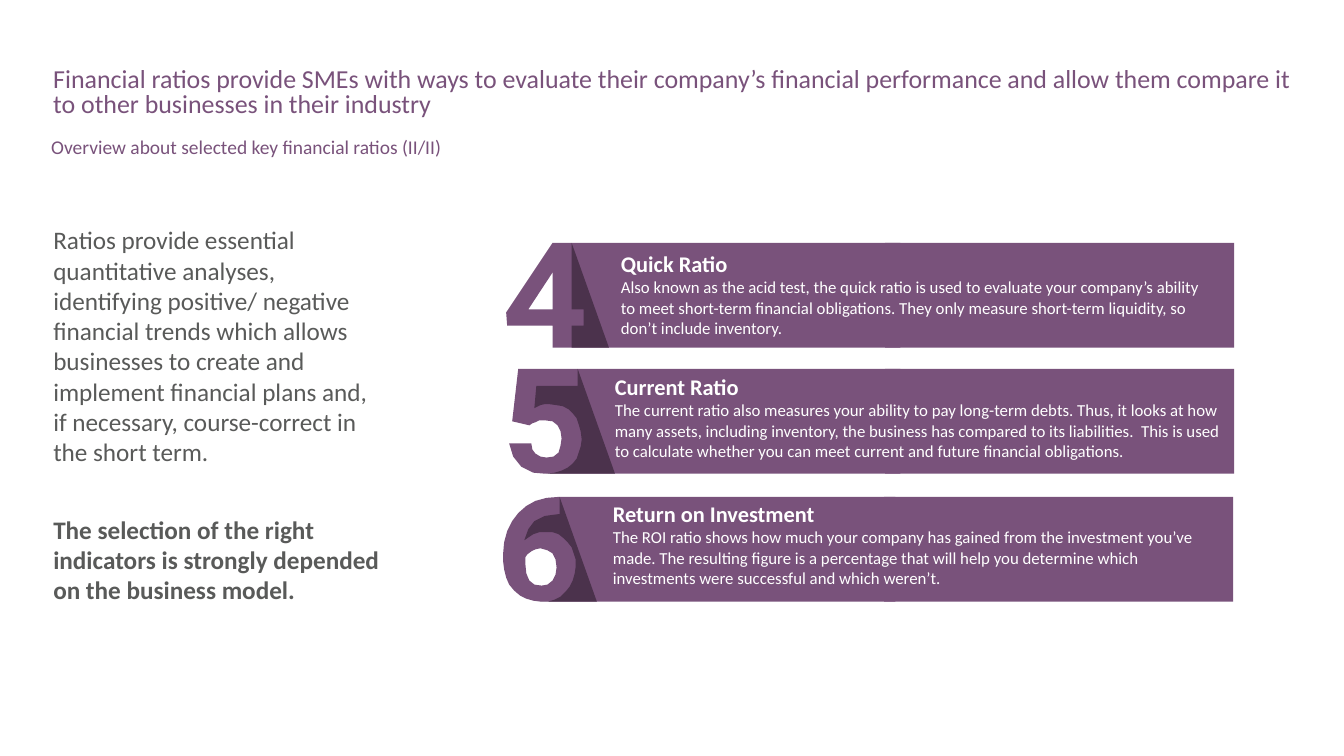
from pptx import Presentation, util as u
from pptx.dml.color import RGBColor
from pptx.enum import shapes, text

# The slide is a grid of 1333 columns by 750 rows.
CELL = u.Inches(0.01)
PURPLE, SHADE, GREY, WHITE = "79527B", "4B324C", "595A59", "FFFFFF"
BAND_HEIGHT = 104

deck = Presentation()
deck.slide_width, deck.slide_height = 1333 * CELL, 750 * CELL
slide = deck.slides.add_slide(deck.slide_layouts[6])


def paint(shape, color):
    shape.shadow.inherit = False
    shape.fill.solid()
    shape.fill.fore_color.rgb = RGBColor.from_string(color)
    shape.line.fill.background()


def write(column, row, columns, rows, paragraphs, size, color, bold=False):
    """Add a wrapped text box and return its text frame."""
    frame = slide.shapes.add_textbox(
        column * CELL, row * CELL, columns * CELL, rows * CELL).text_frame
    frame.word_wrap = True
    frame.text = "\n".join(paragraphs)
    for paragraph in frame.paragraphs:
        font = paragraph.runs[0].font
        font.name, font.size, font.bold = "Calibri", u.Pt(size), bold
        font.color.rgb = RGBColor.from_string(color)
    return frame


summary = write(43, 179, 349, 504, [
    "Ratios provide essential quantitative analyses, identifying positive/ negative "
    "financial trends which allows businesses to create and implement financial plans "
    "and, if necessary, course-correct in the short term.",
    "The selection of the right indicators is strongly depended on the business model.",
], 18, GREY)
summary.vertical_anchor = text.MSO_ANCHOR.MIDDLE
summary.margin_bottom = 44 * CELL
conclusion = summary.paragraphs[1]
conclusion.space_before = u.Pt(34)
conclusion.runs[0].font.bold = True

title = write(43, 63, 1254, 64, [
    "Financial ratios provide SMEs with ways to evaluate their company’s financial "
    "performance and allow them compare it to other businesses in their industry",
], 18.5, PURPLE)
title.paragraphs[0].line_spacing = 0.8
subtitle = write(41, 135, 1256, 28, [
    "Overview about selected key financial ratios (II/II)"], 13.9, PURPLE)
subtitle.paragraphs[0].line_spacing = 0.7

# Outlines are measured in cells from column 500 and the top row of the band.
four = [
    [(48, 0), (2, 69), (3, 82), (48, 82), (48, 104), (393, 104), (393, 0)],
    [(48, 66), (24, 66), (47, 31), (48, 29)],
]
four_shade = [[(67, 0), (67, 66), (79, 66), (79, 82), (67, 82), (67, 104), (104, 104)]]
five = [[
    (14, 0), (8, 52), (25, 56), (28, 54), (31, 53), (35, 51), (40, 51), (48, 52),
    (53, 56), (56, 62), (57, 69), (56, 76), (54, 83), (49, 87), (42, 88), (36, 87),
    (31, 84), (28, 80), (27, 74), (5, 74), (9, 87), (17, 97), (29, 103), (41, 104),
    (393, 104), (393, 0),
]]
five_shade = [[
    (73, 0), (73, 17), (32, 17), (30, 39), (32, 38), (36, 36), (40, 35), (45, 35),
    (52, 36), (58, 37), (64, 40), (68, 44), (72, 49), (74, 55), (76, 62), (77, 70),
    (76, 77), (74, 83), (72, 89), (68, 94), (63, 98), (57, 101), (50, 103), (42, 104),
    (110, 104),
]]
six = [
    [(54, 0), (42, 1), (31, 4), (22, 9), (14, 16), (8, 24), (3, 34), (0, 45), (-1, 56),
     (-1, 64), (0, 72), (2, 80), (5, 87), (10, 93), (16, 98), (22, 101), (29, 103),
     (37, 104), (388, 104), (388, 0)],
    [(51, 77), (48, 83), (43, 87), (37, 88), (30, 87), (25, 83), (22, 76), (21, 66),
     (21, 60), (23, 57), (27, 54), (31, 52), (36, 51), (43, 53), (48, 56), (51, 62),
     (52, 70)],
]
six_shade = [[
    (55, 0), (55, 17), (47, 18), (40, 19), (30, 24), (24, 32), (20, 43), (29, 37),
    (35, 35), (41, 35), (48, 35), (54, 37), (59, 41), (63, 45), (67, 50), (69, 56),
    (71, 62), (71, 69), (70, 76), (68, 83), (65, 89), (61, 94), (56, 99), (50, 102),
    (43, 104), (36, 104), (92, 104),
]]

# Top row, digit, its shade, right part's column, text column and width,
# rows down to the heading, heading, description.
ratios = [
    (241, four, four_shade, 878, 606, 605, 2, "Quick Ratio",
     "Also known as the acid test, the quick ratio is used to evaluate your company’s "
     "ability to meet short-term financial obligations. They only measure short-term "
     "liquidity, so don’t include inventory."),
    (366, five, five_shade, 878, 600, 623, -1, "Current Ratio",
     "The current ratio also measures your ability to pay long-term debts. Thus, it "
     "looks at how many assets, including inventory, the business has compared to its "
     "liabilities.  This is used to calculate whether you can meet current and future "
     "financial obligations."),
    (493, six, six_shade, 877, 598, 605, -2, "Return on Investment",
     "The ROI ratio shows how much your company has gained from the investment you’ve "
     "made. The resulting figure is a percentage that will help you determine which "
     "investments were successful and which weren’t."),
]

for top, digit, shade, right, column, width, drop, heading, description in ratios:
    for contours, color in ((digit, PURPLE), (shade, SHADE)):
        outline = slide.shapes.build_freeform(*contours[0][0], scale=CELL)
        outline.add_line_segments(contours[0][1:])
        for hole in contours[1:]:
            outline.move_to(*hole[0])
            outline.add_line_segments(hole[1:])
        paint(outline.convert_to_shape(500 * CELL, top * CELL), color)
    paint(slide.shapes.add_shape(
        shapes.MSO_SHAPE.RECTANGLE,
        right * CELL, top * CELL, 346 * CELL, BAND_HEIGHT * CELL), PURPLE)
    write(column, top + drop, 248, 37, [heading], 16, WHITE, bold=True)
    write(column, top + drop + 27, width, 71, [description], 12, WHITE)

deck.save("out.pptx")
